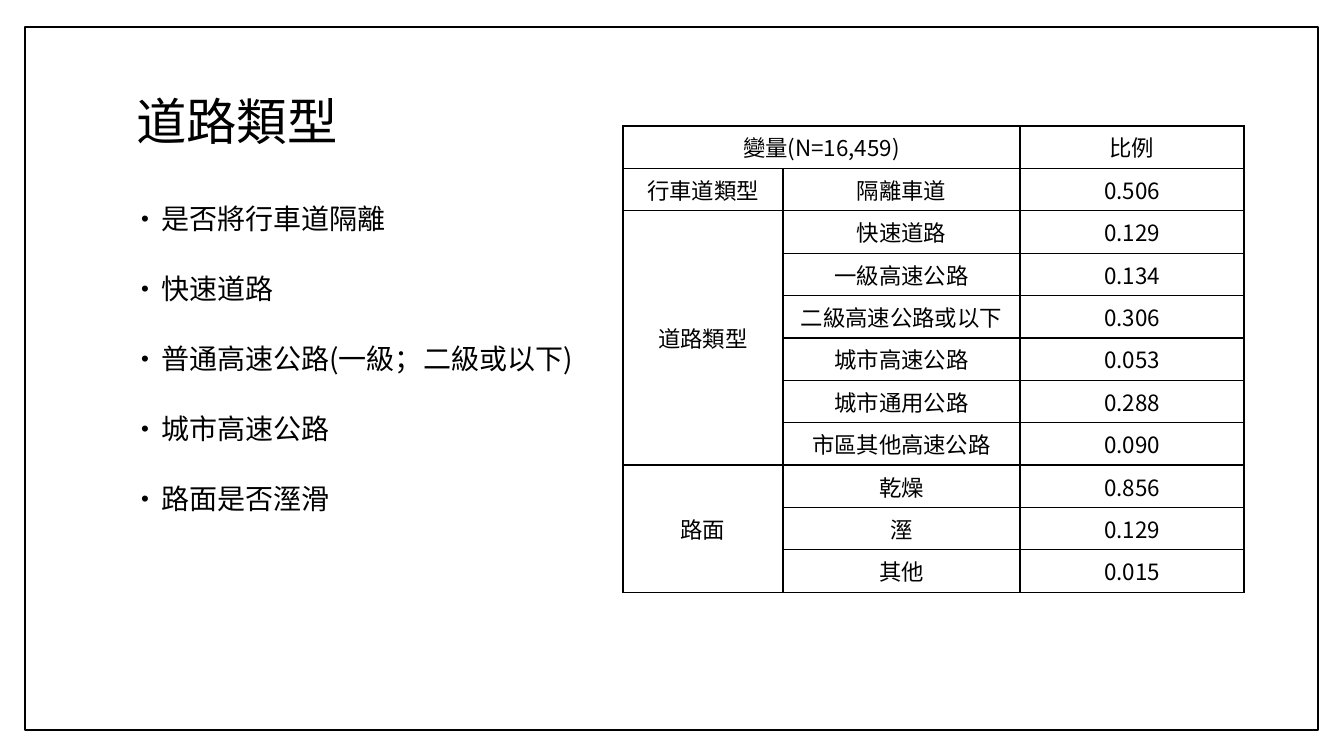
import pptx
import pptx.dml.color
import pptx.enum.shapes
import pptx.enum.text
import pptx.oxml
import pptx.oxml.ns
import pptx.util

PX = 914400 / 100.8
FONT = "Noto Sans CJK SC"
BLACK, WHITE = "000000", "FFFFFF"
NS = pptx.oxml.ns.nsdecls("a")
ALIGN = pptx.enum.text.PP_ALIGN
ANCHOR = pptx.enum.text.MSO_ANCHOR

BULLETS = ["是否將行車道隔離", "快速道路", "普通高速公路(一級；二級或以下)",
           "城市高速公路", "路面是否溼滑"]
HEADER = ("變量(N=16,459)", "比例")
GROUPS = [
    ("行車道類型", [("隔離車道", "0.506")]),
    ("道路類型", [("快速道路", "0.129"), ("一級高速公路", "0.134"),
              ("二級高速公路或以下", "0.306"), ("城市高速公路", "0.053"),
              ("城市通用公路", "0.288"), ("市區其他高速公路", "0.090")]),
    ("路面", [("乾燥", "0.856"), ("溼", "0.129"), ("其他", "0.015")]),
]
COLUMN_WIDTHS = (160, 237, 224)
ROW_HEIGHT = 41


def emu(px):
    return pptx.util.Emu(round(px * PX))


def rgb(value):
    return pptx.dml.color.RGBColor.from_string(value)


def place(sp, left, top, width, height):
    sp.left, sp.top, sp.width, sp.height = map(emu, (left, top, width, height))


def add_run(p, text, size):
    r = p.add_run()
    r.text = text
    r.font.size = pptx.util.Pt(size)
    r.font.name = FONT
    r.font.bold = False
    r.font.color.rgb = rgb(BLACK)
    east_asian = pptx.oxml.parse_xml(f'<a:ea {NS} typeface="{FONT}"/>')
    r.font._element.find(pptx.oxml.ns.qn("a:latin")).addnext(east_asian)


def add_frame(s):
    """Draw the page border behind the title."""
    sp = s.shapes.add_shape(pptx.enum.shapes.MSO_SHAPE.RECTANGLE,
                            emu(25), emu(27), emu(1293), emu(703))
    sp.shadow.inherit = False
    sp.fill.solid()
    sp.fill.fore_color.rgb = rgb(WHITE)
    sp.line.color.rgb = rgb(BLACK)
    sp.line.width = pptx.util.Pt(1)
    s.shapes.title._element.addprevious(sp._element)


def fill_title(sp, text):
    place(sp, 126, 68, 1089, 113)
    tf = sp.text_frame
    tf.vertical_anchor = ANCHOR.MIDDLE
    p = tf.paragraphs[0]
    p.alignment = ALIGN.LEFT
    p.line_spacing = 0.9
    add_run(p, text, 36)


def fill_bullets(sp, items):
    place(sp, 126, 180, 1089, 492)
    tf = sp.text_frame
    tf.auto_size = pptx.enum.text.MSO_AUTO_SIZE.NONE
    for i, item in enumerate(items):
        p = tf.add_paragraph() if i else tf.paragraphs[0]
        p.line_spacing = 1.5
        p.space_before = pptx.util.Pt(14)
        pPr = p._p.get_or_add_pPr()
        pPr.set("marL", str(emu(25)))
        pPr.set("indent", str(emu(-20)))
        for xml in (f'<a:buClr {NS}><a:srgbClr val="{BLACK}"/></a:buClr>',
                    f'<a:buSzPct {NS} val="80000"/>',
                    f'<a:buFont {NS} typeface="Arial"/>',
                    f'<a:buChar {NS} char="•"/>'):
            pPr.append(pptx.oxml.parse_xml(xml))
        add_run(p, item, 20)


def style_cell(cell):
    cell.fill.background()
    cell.vertical_anchor = ANCHOR.MIDDLE
    tcPr = cell._tc.get_or_add_tcPr()
    for i, side in enumerate(("lnL", "lnR", "lnT", "lnB")):
        tcPr.insert(i, pptx.oxml.parse_xml(
            f'<a:{side} {NS} w="12700"><a:solidFill><a:srgbClr val="{BLACK}"/>'
            f'</a:solidFill></a:{side}>'))


def write_cell(cell, text):
    p = cell.text_frame.paragraphs[0]
    p.alignment = ALIGN.CENTER
    add_run(p, text, 16)


def add_ratio_table(s):
    count = 1 + sum(len(rows) for _, rows in GROUPS)
    table = s.shapes.add_table(count, len(COLUMN_WIDTHS), emu(623), emu(126),
                               emu(sum(COLUMN_WIDTHS)), emu(ROW_HEIGHT * count)).table
    table.first_row = table.horz_banding = False
    for column, width in zip(table.columns, COLUMN_WIDTHS):
        column.width = emu(width)
    for cell in table.iter_cells():
        style_cell(cell)
    table.cell(0, 0).merge(table.cell(0, 1))
    write_cell(table.cell(0, 0), HEADER[0])
    write_cell(table.cell(0, 2), HEADER[1])
    row = 1
    for group, entries in GROUPS:
        if len(entries) > 1:
            table.cell(row, 0).merge(table.cell(row + len(entries) - 1, 0))
        write_cell(table.cell(row, 0), group)
        for label, ratio in entries:
            write_cell(table.cell(row, 1), label)
            write_cell(table.cell(row, 2), ratio)
            row += 1


def main():
    prs = pptx.Presentation()
    prs.slide_width, prs.slide_height = emu(1344), emu(756)
    s = prs.slides.add_slide(prs.slide_layouts[1])
    add_frame(s)
    fill_title(s.shapes.title, "道路類型")
    fill_bullets(s.placeholders[1], BULLETS)
    add_ratio_table(s)
    prs.save("out.pptx")


if __name__ == "__main__":
    main()
